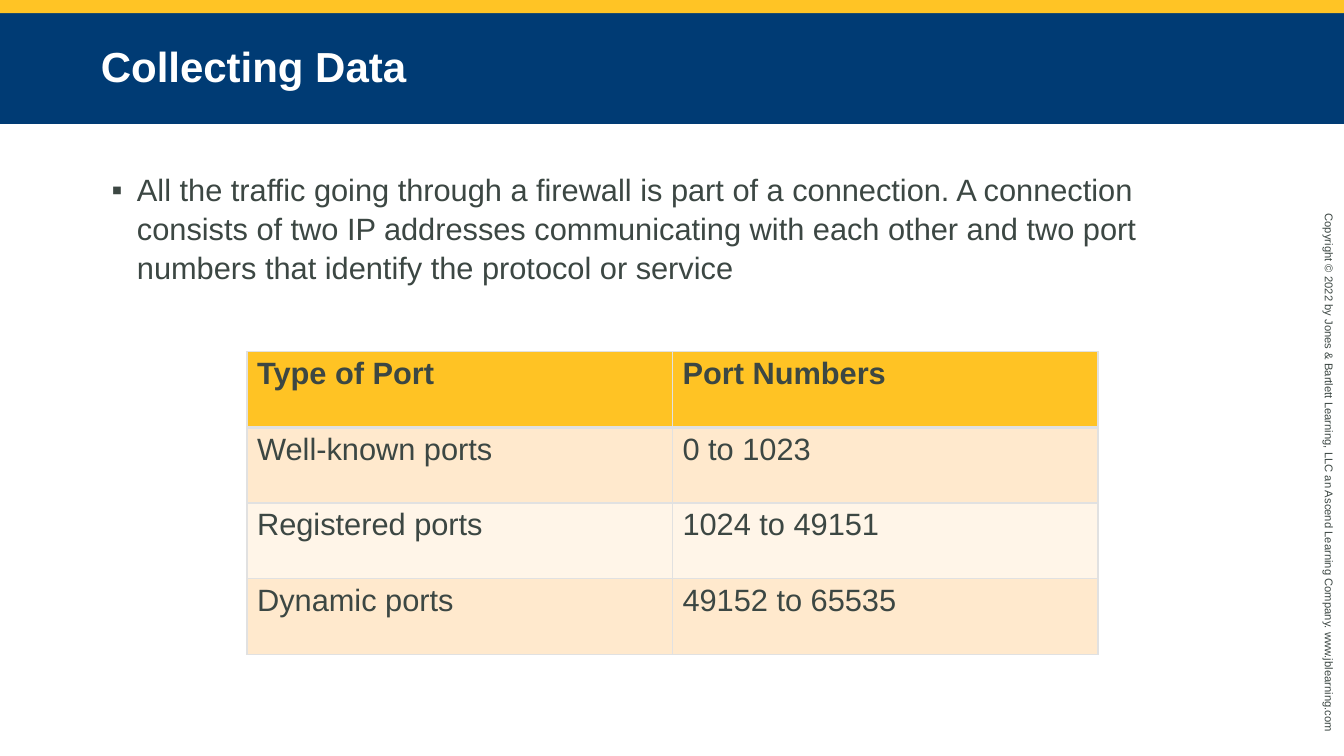
"""Build the "Collecting Data" slide with its table of port ranges."""
from dataclasses import dataclass

import lxml.etree
import pptx
import pptx.dml.color
import pptx.enum.shapes
import pptx.enum.text
import pptx.oxml.ns
import pptx.util

Inches = pptx.util.Inches
Pt = pptx.util.Pt
qn = pptx.oxml.ns.qn


@dataclass(frozen=True)
class Theme:
    font: str = "Arial"
    navy: str = "003B74"
    gold: str = "FFC425"
    header: str = "FFC324"
    bands: tuple[str, str] = ("FFE9CD", "FFF5E8")
    border: str = "E1E1E1"
    ink: str = "3C4743"
    white: str = "FFFFFF"
    title_size: float = 30
    body_size: float = 22
    copyright_size: float = 8


@dataclass(frozen=True)
class Box:
    left: float
    top: float
    width: float
    height: float

    def lengths(self) -> tuple[int, ...]:
        return tuple(Inches(v) for v in (self.left, self.top, self.width, self.height))


@dataclass(frozen=True)
class PortRange:
    kind: str
    numbers: str


THEME = Theme()
TITLE = Box(0, 0.13, 13.33, 1.1)
STRIPE = Box(0, 0, 13.33, 0.13)
COPYRIGHT = Box(10.44, 4.64, 5.48, 0.24)
BODY = Box(1.01, 1.63, 11.25, 1.44)
TABLE = Box(2.45, 3.49, 8.44, 3)
HEADER = PortRange("Type of Port", "Port Numbers")
PORTS = [
    PortRange("Well-known ports", "0 to 1023"),
    PortRange("Registered ports", "1024 to 49151"),
    PortRange("Dynamic ports", "49152 to 65535"),
]


def rgb(color: str) -> pptx.dml.color.RGBColor:
    return pptx.dml.color.RGBColor.from_string(color)


def set_attributes(target, **values) -> None:
    for name, value in values.items():
        setattr(target, name, value)


def set_fill(target, color: str) -> None:
    target.fill.solid()
    target.fill.fore_color.rgb = rgb(color)


def write(tf, text: str, size: float, color: str = THEME.ink, bold: bool = False):
    p = tf.paragraphs[0]
    r = p.add_run()
    r.text = text
    set_attributes(r.font, name=THEME.font, size=Pt(size), bold=bold)
    r.font.color.rgb = rgb(color)
    return p


def add_stripe(slide) -> None:
    sp = slide.shapes.add_shape(pptx.enum.shapes.MSO_SHAPE.RECTANGLE, *STRIPE.lengths())
    sp.shadow.inherit = False
    set_fill(sp, THEME.gold)
    sp.line.fill.background()


def add_copyright(slide) -> None:
    sp = slide.shapes.add_textbox(*COPYRIGHT.lengths())
    sp.rotation = 90
    set_attributes(sp.text_frame, word_wrap=True,
                   auto_size=pptx.enum.text.MSO_AUTO_SIZE.SHAPE_TO_FIT_TEXT)
    write(sp.text_frame, "Copyright © 2022 by Jones & Bartlett Learning, LLC an Ascend "
          "Learning Company. www.jblearning.com", THEME.copyright_size)


def format_title(slide) -> None:
    sp = slide.shapes.title
    left, top, width, height = TITLE.lengths()
    set_attributes(sp, left=left, top=top, width=width, height=height)
    set_fill(sp, THEME.navy)
    set_attributes(sp.text_frame, word_wrap=True, margin_left=Inches(1),
                   margin_right=Inches(1),
                   vertical_anchor=pptx.enum.text.MSO_ANCHOR.MIDDLE)
    p = write(sp.text_frame, "Collecting Data", THEME.title_size, THEME.white, True)
    set_attributes(p, line_spacing=0.95, alignment=pptx.enum.text.PP_ALIGN.LEFT)


def add_body(slide) -> None:
    sp = slide.shapes.add_textbox(*BODY.lengths())
    sp.text_frame.word_wrap = True
    p = write(sp.text_frame, "All the traffic going through a firewall is part of a "
              "connection. A connection consists of two IP addresses communicating with "
              "each other and two port numbers that identify the protocol or service",
              THEME.body_size)
    pPr = p._p.get_or_add_pPr()
    pPr.set("marL", str(Inches(0.25)))
    pPr.set("indent", str(-Inches(0.25)))
    lxml.etree.SubElement(pPr, qn("a:buFont"), typeface=THEME.font)
    lxml.etree.SubElement(pPr, qn("a:buChar"), char="▪")
    p.line_spacing = 1.05


def set_borders(cell, top: float, bottom: float) -> None:
    tcPr = cell._tc.get_or_add_tcPr()
    for side, width in {"L": 1, "R": 1, "T": top, "B": bottom}.items():
        ln = lxml.etree.SubElement(tcPr, qn(f"a:ln{side}"), w=str(Pt(width)))
        fill = lxml.etree.SubElement(ln, qn("a:solidFill"))
        lxml.etree.SubElement(fill, qn("a:srgbClr"), val=THEME.border)


def add_port_table(slide) -> None:
    rows = [HEADER, *PORTS]
    table = slide.shapes.add_table(len(rows), 2, *TABLE.lengths()).table
    for i, port in enumerate(rows):
        for j, text in enumerate((port.kind, port.numbers)):
            cell = table.cell(i, j)
            set_borders(cell, top=3 if i == 1 else 1, bottom=3 if i == 0 else 1)
            set_fill(cell, THEME.bands[(i - 1) % 2] if i else THEME.header)
            write(cell.text_frame, text, THEME.body_size, bold=i == 0)


def main() -> None:
    prs = pptx.Presentation()
    set_attributes(prs, slide_width=Inches(13.33), slide_height=Inches(7.5))
    slide = prs.slides.add_slide(prs.slide_layouts[5])
    add_stripe(slide)
    add_copyright(slide)
    format_title(slide)
    add_body(slide)
    add_port_table(slide)
    prs.save("out.pptx")


if __name__ == "__main__":
    main()
